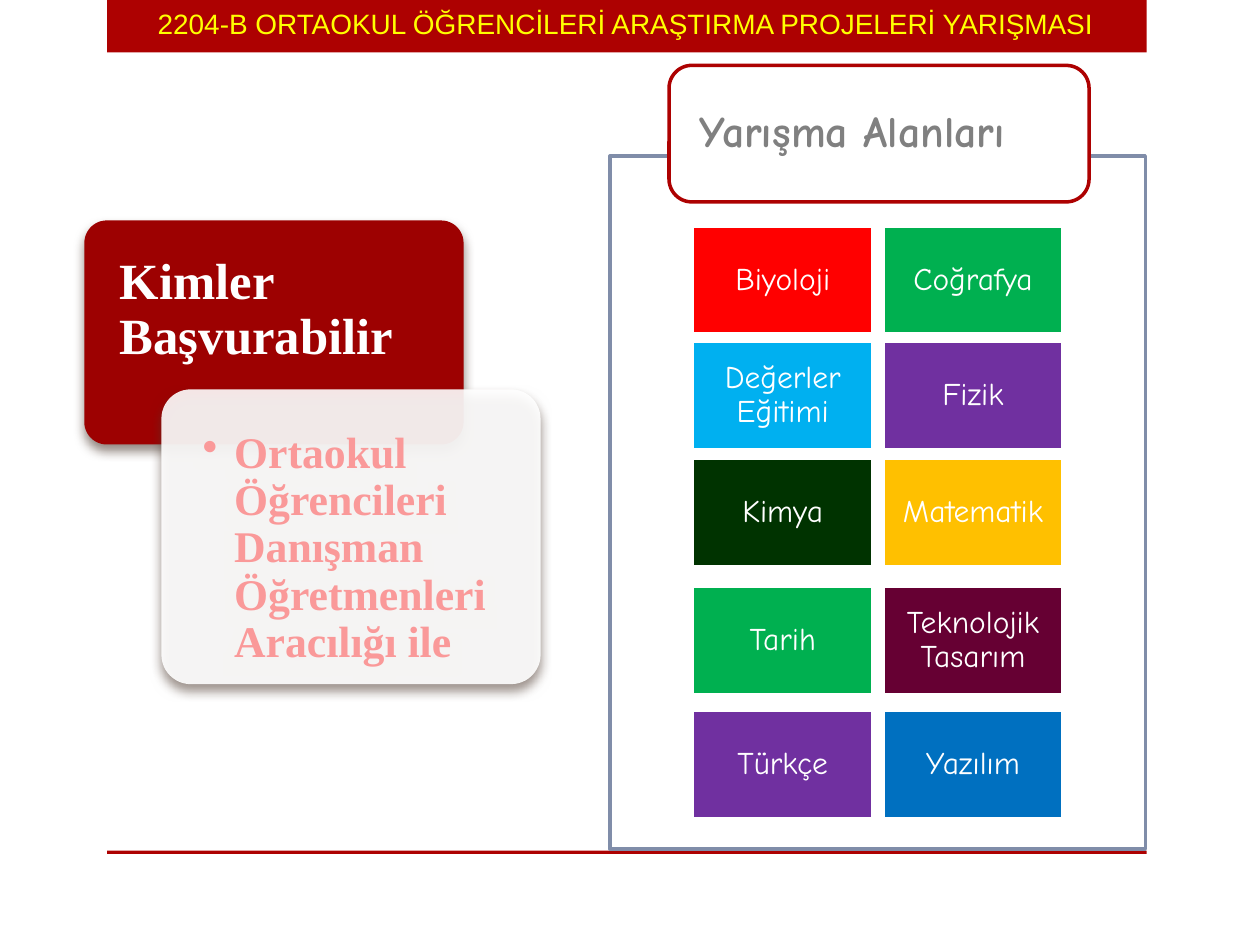
from lxml import etree
from pptx import Presentation
from pptx.dml.color import RGBColor
from pptx.enum import shapes, text
from pptx.oxml import ns
from pptx.util import Pt

RED = "AD0101"
RECT = shapes.MSO_SHAPE.RECTANGLE
ROUNDED = shapes.MSO_SHAPE.ROUNDED_RECTANGLE
LEFT, CENTER = text.PP_ALIGN.LEFT, text.PP_ALIGN.CENTER
TOP, MIDDLE = text.MSO_ANCHOR.TOP, text.MSO_ANCHOR.MIDDLE

COLUMN_LEFTS = (395.8, 504.5)
AREA_ROWS = [
    (129, ("Biyoloji", "FF0000"), ("Coğrafya", "00B050")),
    (195, ("Değerler Eğitimi", "00B0F0"), ("Fizik", "7030A0")),
    (262, ("Kimya", "003300"), ("Matematik", "FFC000")),
    (335, ("Tarih", "00B050"), ("Teknolojik Tasarım", "660033")),
    (406, ("Türkçe", "7030A0"), ("Yazılım", "0070C0")),
]


def color(hex_value):
    return RGBColor.from_string(hex_value)


def add_child(parent, tag, **attributes):
    child = etree.SubElement(parent, ns.qn(tag))
    for key, value in attributes.items():
        child.set(key, str(value))
    return child


def add_box(slide, kind, box, fill, line=None, radius=None):
    panel = slide.shapes.add_shape(kind, *map(Pt, box))
    panel.shadow.inherit = False
    panel.fill.solid()
    panel.fill.fore_color.rgb = color(fill)
    if line:
        panel.line.color.rgb = color(line)
        panel.line.width = Pt(2)
    else:
        panel.line.fill.background()
    if radius is not None:
        panel.adjustments[0] = radius
    return panel


def write(holder, words, size, font, ink, bold=False, align=LEFT, anchor=MIDDLE,
          insets=(5, 5, 5, 5), spacing=0.9):
    frame = holder.text_frame
    frame.word_wrap = True
    frame.vertical_anchor = anchor
    (frame.margin_left, frame.margin_top,
     frame.margin_right, frame.margin_bottom) = map(Pt, insets)
    paragraph = frame.paragraphs[0]
    paragraph.alignment = align
    paragraph.line_spacing = spacing
    run = paragraph.add_run()
    run.text = words
    run.font.size = Pt(size)
    run.font.name = font
    run.font.bold = bold
    run.font.color.rgb = color(ink)
    return paragraph


def add_bullet(paragraph, indent):
    properties = paragraph._p.get_or_add_pPr()
    properties.set("marL", str(Pt(indent)))
    properties.set("indent", str(-Pt(indent)))
    add_child(properties, "a:buChar", char="•")


def add_shadow(card):
    effects = card._element.spPr.find(ns.qn("a:effectLst"))
    shadow = add_child(effects, "a:outerShdw", blurRad=Pt(6), dist=Pt(4),
                       dir=5400000, rotWithShape=0)
    tint = add_child(shadow, "a:srgbClr", val="4E3B30")
    add_child(tint, "a:alpha", val=60000)


def add_card(slide, box, fill, opacity=100):
    card = add_box(slide, ROUNDED, box, fill, radius=0.1)
    add_shadow(card)
    if opacity < 100:
        tint = card._element.spPr.find(ns.qn("a:solidFill"))[0]
        add_child(tint, "a:alpha", val=opacity * 1000)
    return card


def add_banner(slide):
    add_box(slide, RECT, (61.2, 0, 594, 30), RED)
    add_box(slide, RECT, (61.2, 486, 594, 2), RED)
    title = slide.shapes.add_textbox(*map(Pt, (59.8, 0, 595.4, 26.6)))
    write(title, "2204-B ORTAOKUL ÖĞRENCİLERİ ARAŞTIRMA PROJELERİ YARIŞMASI",
          16, "Arial", "FFFF00", align=CENTER, anchor=TOP,
          insets=(7.2, 3.6, 7.2, 3.6), spacing=1.0)


def add_areas(slide):
    add_box(slide, RECT, (348.5, 89.3, 306, 396), "FFFFFF", line="808DA9")
    heading = add_box(slide, ROUNDED, (382.3, 37.4, 240, 78), "FFFFFF", line=RED)
    write(heading, "Yarışma Alanları", 25, "Comic Neue", "808080", bold=True,
          insets=(13.5, 0, 13.5, 0))
    for top, *areas in AREA_ROWS:
        for left, (area, fill) in zip(COLUMN_LEFTS, areas):
            tile = add_box(slide, RECT, (left, top, 103, 62), fill, line="FFFFFF")
            write(tile, area, 18, "Comic Neue", "FFFFFF", align=CENTER)


def add_applicants(slide):
    question = add_card(slide, (48.2, 126, 216.7, 128), "9D0101")
    write(question, "Kimler Başvurabilir", 29, "Times New Roman", "FFFFFF",
          bold=True, anchor=TOP, insets=(16.5, 16.5, 16.5, 8.5))
    answer = add_card(slide, (92.2, 222.5, 216.7, 168.5), "FFFFFF", opacity=90)
    applicants = write(
        answer, "Ortaokul Öğrencileri Danışman Öğretmenleri Aracılığı ile",
        25, "Times New Roman", "FA9999", bold=True, anchor=TOP,
        insets=(18.7, 18.7, 18.7, 18.7))
    add_bullet(applicants, 18)


def main():
    deck = Presentation()
    deck.slide_width, deck.slide_height = Pt(720), Pt(540)
    slide = deck.slides.add_slide(deck.slide_layouts[6])
    add_banner(slide)
    add_areas(slide)
    add_applicants(slide)
    deck.save("out.pptx")


if __name__ == "__main__":
    main()
